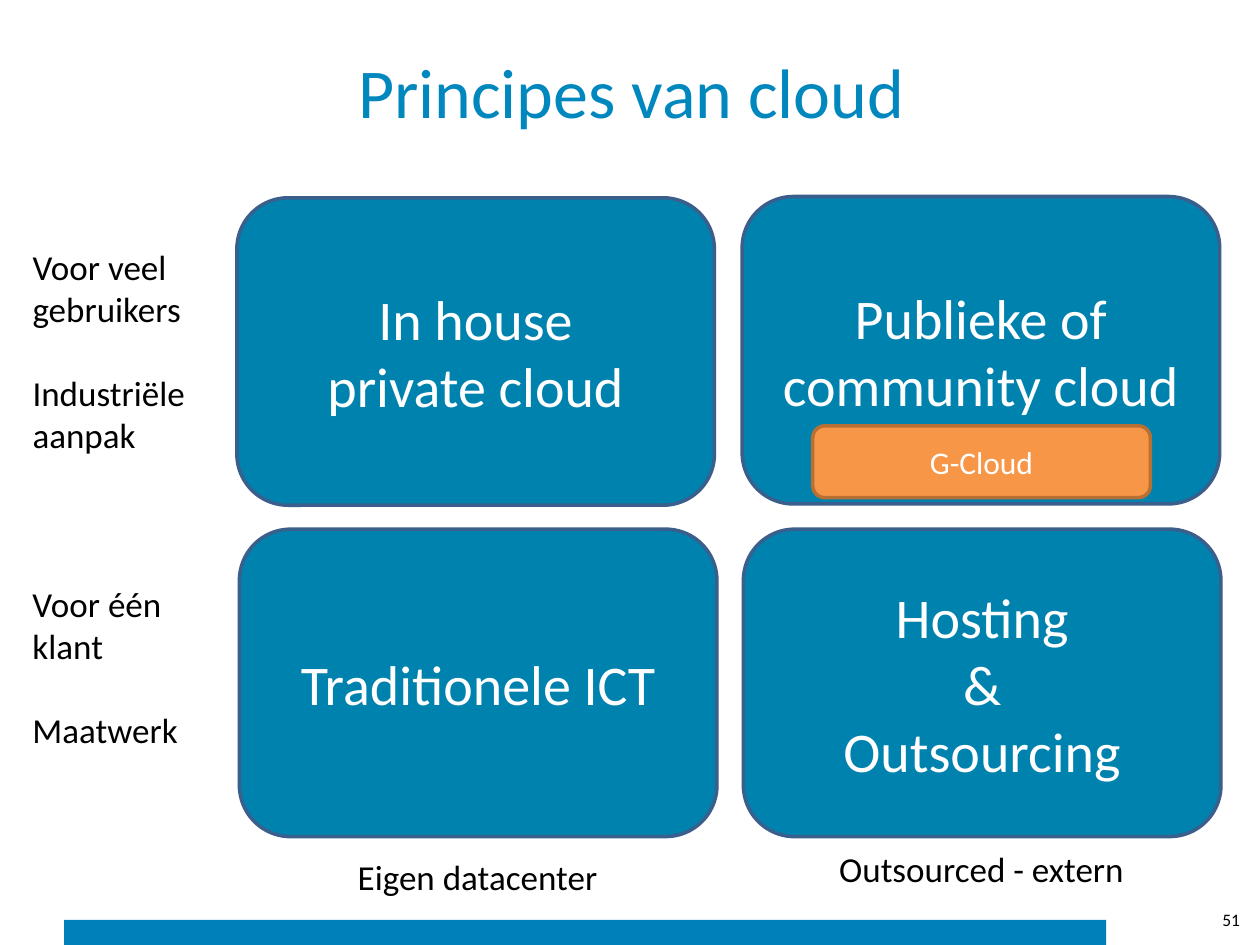
from pptx import Presentation
from pptx.dml.color import RGBColor
from pptx.enum import shapes, text
from pptx.util import Inches, Pt

HUES = {"bar": "0080BB", "title": "0087BE", "tile": "0082AE", "edge": "3A5F8C",
        "tag": "F79646", "rim": "B76F34", "ink": "000000", "white": "FFFFFF"}
MID, LEFT, RIGHT = text.PP_ALIGN.CENTER, text.PP_ALIGN.LEFT, text.PP_ALIGN.RIGHT
TOP, CORE = text.MSO_ANCHOR.TOP, text.MSO_ANCHOR.MIDDLE
RECT, ROUND = shapes.MSO_SHAPE.RECTANGLE, shapes.MSO_SHAPE.ROUNDED_RECTANGLE

TITLE = "Principes van cloud"
SIZE = (3.79, 2.44)
TILES = [
    ((1.88, 1.57), ["In house", "private cloud"]),
    ((5.89, 1.56), ["Publieke of community cloud"]),
    ((1.9, 4.2), ["Traditionele ICT"]),
    ((5.9, 4.2), ["Hosting", "&", "Outsourcing"]),
]
TAG = ((6.45, 3.38, 2.68, 0.57), ["G-Cloud"])
COLS = [
    ((2.73, 6.74, 2.12, 0.44), ["Eigen datacenter"]),
    ((6.55, 6.68, 2.48, 0.44), ["Outsourced - extern"]),
]
ROWS = [
    ((0.16, 4.57, 1.37, 1.45), ["Voor één\nklant", "Maatwerk"]),
    ((0.16, 1.9, 1.42, 1.78), ["Voor veel\ngebruikers", "Industriële\naanpak"]),
]
PAGE = ((9.12, 7.1, 0.82, 0.4), ["51"])


def color(name):
    return RGBColor.from_string(HUES[name])


def write(frame, lines, size, hue, align=MID, anchor=CORE, gap=0):
    frame.vertical_anchor = anchor
    for i, line in enumerate(lines):
        para = frame.add_paragraph() if i else frame.paragraphs[0]
        para.text = line
        para.alignment = align
        para.font.size = Pt(size)
        para.font.name = "Calibri"
        para.font.color.rgb = color(hue)
        if i and gap:
            para.space_before = Pt(gap)


def block(slide, kind, at, fill, edge=None):
    shape = slide.shapes.add_shape(kind, *map(Inches, at))
    shape.shadow.inherit = False
    shape.fill.solid()
    shape.fill.fore_color.rgb = color(fill)
    if edge:
        shape.line.color.rgb = color(edge)
        shape.line.width = Pt(2)
    else:
        shape.line.fill.background()
    shape.text_frame.word_wrap = True
    return shape.text_frame


def label(slide, at, lines, size=20, **style):
    box = slide.shapes.add_textbox(*map(Inches, at))
    box.text_frame.word_wrap = False
    write(box.text_frame, lines, size, "ink", **style)


def main():
    deck = Presentation()
    deck.slide_width, deck.slide_height = Inches(10), Inches(7.5)
    slide = deck.slides.add_slide(deck.slide_layouts[5])
    block(slide, RECT, (0.51, 7.3, 8.27, 0.2), "bar")

    head = slide.shapes.title
    head.left, head.top, head.width, head.height = map(Inches, (0.51, 0.21, 9, 1.01))
    write(head.text_frame, [TITLE], 40, "title")

    label(slide, *PAGE, size=10, align=RIGHT)
    for at, lines in COLS:
        label(slide, at, lines, anchor=TOP)
    for at, lines in ROWS:
        label(slide, at, lines, align=LEFT, anchor=TOP, gap=24)
    for spot, lines in TILES:
        write(block(slide, ROUND, spot + SIZE, "tile", "edge"), lines, 32, "white")
    at, lines = TAG
    write(block(slide, ROUND, at, "tag", "rim"), lines, 18, "white")
    deck.save("out.pptx")


if __name__ == "__main__":
    main()
